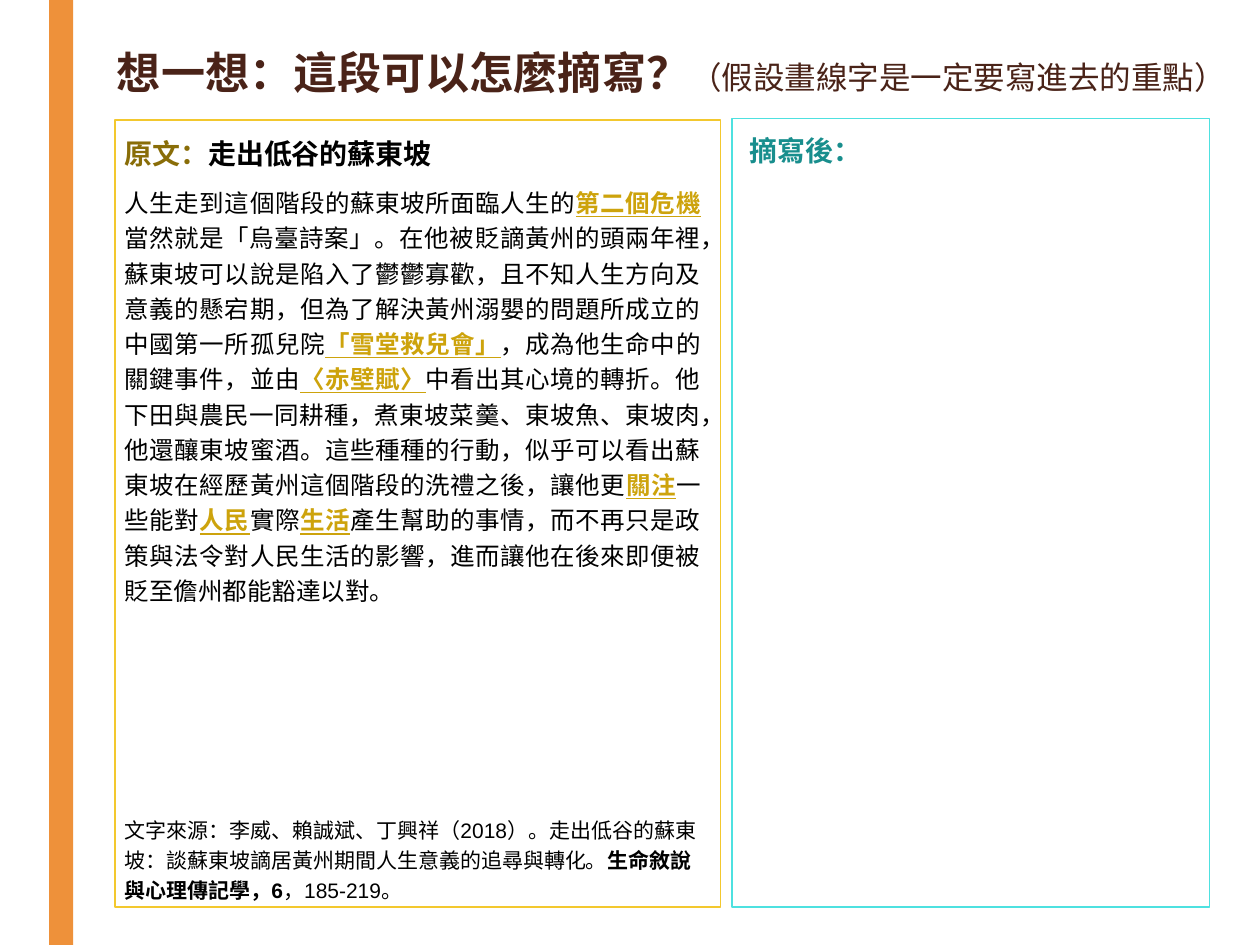
from pptx import Presentation
from pptx.dml.color import RGBColor
from pptx.enum.shapes import MSO_SHAPE
from pptx.enum.text import PP_ALIGN
from pptx.util import Inches, Pt

RECT = MSO_SHAPE.RECTANGLE
LEFT, JUSTIFY = PP_ALIGN.LEFT, PP_ALIGN.JUSTIFY

WHITE = RGBColor(0xFF, 0xFF, 0xFF)
BLACK = RGBColor(0, 0, 0)
ORANGE = RGBColor(0xEE, 0x91, 0x3A)
YELLOW = RGBColor(0xF3, 0xC8, 0x2E)
GOLD = RGBColor(0xCD, 0xA3, 0x0C)
OLIVE = RGBColor(0x89, 0x6D, 0x08)
BROWN = RGBColor(0x4A, 0x23, 0x18)
CYAN = RGBColor(0x4E, 0xE1, 0xE0)
TEAL = RGBColor(0x18, 0x8E, 0x8D)

STORY = (
    "人生走到這個階段的蘇東坡所面臨人生的*第二個危機*當然就是「烏臺詩案」。"
    "在他被貶謫黃州的頭兩年裡，蘇東坡可以說是陷入了鬱鬱寡歡，且不知人生方向及"
    "意義的懸宕期，但為了解決黃州溺嬰的問題所成立的中國第一所孤兒院"
    "*「雪堂救兒會」*，成為他生命中的關鍵事件，並由*〈赤壁賦〉*中看出其心境的轉折。"
    "他下田與農民一同耕種，煮東坡菜羹、東坡魚、東坡肉，他還釀東坡蜜酒。"
    "這些種種的行動，似乎可以看出蘇東坡在經歷黃州這個階段的洗禮之後，讓他更"
    "*關注*一些能對*人民*實際*生活*產生幫助的事情，而不再只是政策與法令對人民"
    "生活的影響，進而讓他在後來即便被貶至儋州都能豁達以對。"
)
SOURCE = (
    "文字來源：李威、賴誠斌、丁興祥（2018）。走出低谷的蘇東坡："
    "談蘇東坡謫居黃州期間人生意義的追尋與轉化。*生命敘說與心理傳記學，6*，185-219。"
)


def add_rect(slide, box, fill, line=None):
    shape = slide.shapes.add_shape(RECT, *map(Inches, box))
    shape.shadow.inherit = False
    shape.fill.solid()
    shape.fill.fore_color.rgb = fill
    if line is None:
        shape.line.fill.background()
    else:
        shape.line.color.rgb = line
        shape.line.width = Pt(1)


def add_text(slide, box):
    frame = slide.shapes.add_textbox(*map(Inches, box)).text_frame
    frame.word_wrap = True
    return frame


def style(para, size, color, bold=None, space=None, before=0, align=LEFT):
    para.font.name = "Arial"
    para.font.size = Pt(size)
    para.font.color.rgb = color
    para.font.bold = bold
    para.alignment = align
    if space:
        para.line_spacing = space
        para.space_before = Pt(before)
        para.space_after = Pt(2)


def add_run(para, text):
    run = para.add_run()
    run.text = text
    return run.font


def add_marked(para, text, color=None):
    for index, part in enumerate(text.split("*")):
        font = add_run(para, part)
        if index % 2:
            font.bold = True
            if color is not None:
                font.color.rgb = color
                font.underline = True


def add_title(slide, box):
    para = add_text(slide, box).paragraphs[0]
    style(para, 25.2, BROWN)
    para.line_spacing = 0.89
    add_run(para, "想一想：這段可以怎麼摘寫？").bold = True
    add_run(para, "（假設畫線字是一定要寫進去的重點）").size = Pt(18)


def add_passage(slide, box):
    left, top, width, height = box
    add_rect(slide, box, WHITE, YELLOW)
    inner, wide = left - 0.02, width - 0.04
    frame = add_text(slide, (inner, top + 0.03, wide, 5.3))
    head = frame.paragraphs[0]
    style(head, 16, BLACK, True, 1.2, 10)
    add_run(head, "原文：").color.rgb = OLIVE
    add_run(head, "走出低谷的蘇東坡")
    story = frame.add_paragraph()
    style(story, 14, BLACK, space=1.2, before=5, align=JUSTIFY)
    add_marked(story, STORY, GOLD)
    credit = add_text(slide, (inner, top + height - 0.8, wide, 0.8)).paragraphs[0]
    style(credit, 12, BLACK, space=1.2, before=5)
    add_marked(credit, SOURCE)


def add_answer(slide, box):
    left, top, width, height = box
    add_rect(slide, box, WHITE, CYAN)
    para = add_text(slide, (left + 0.04, top + 0.07, width - 0.1, 3.06)).paragraphs[0]
    style(para, 16, TEAL, True)
    add_run(para, "摘寫後：")


def main():
    deck = Presentation()
    deck.slide_width, deck.slide_height = Inches(10), Inches(7.5)
    slide = deck.slides.add_slide(deck.slide_layouts[6])
    add_rect(slide, (0.39, 0, 0.19, 7.5), ORANGE)
    add_title(slide, (0.83, 0.36, 9.17, 0.76))
    add_passage(slide, (0.91, 0.95, 4.81, 6.25))
    add_answer(slide, (5.81, 0.94, 3.79, 6.26))
    deck.save("out.pptx")


if __name__ == "__main__":
    main()
